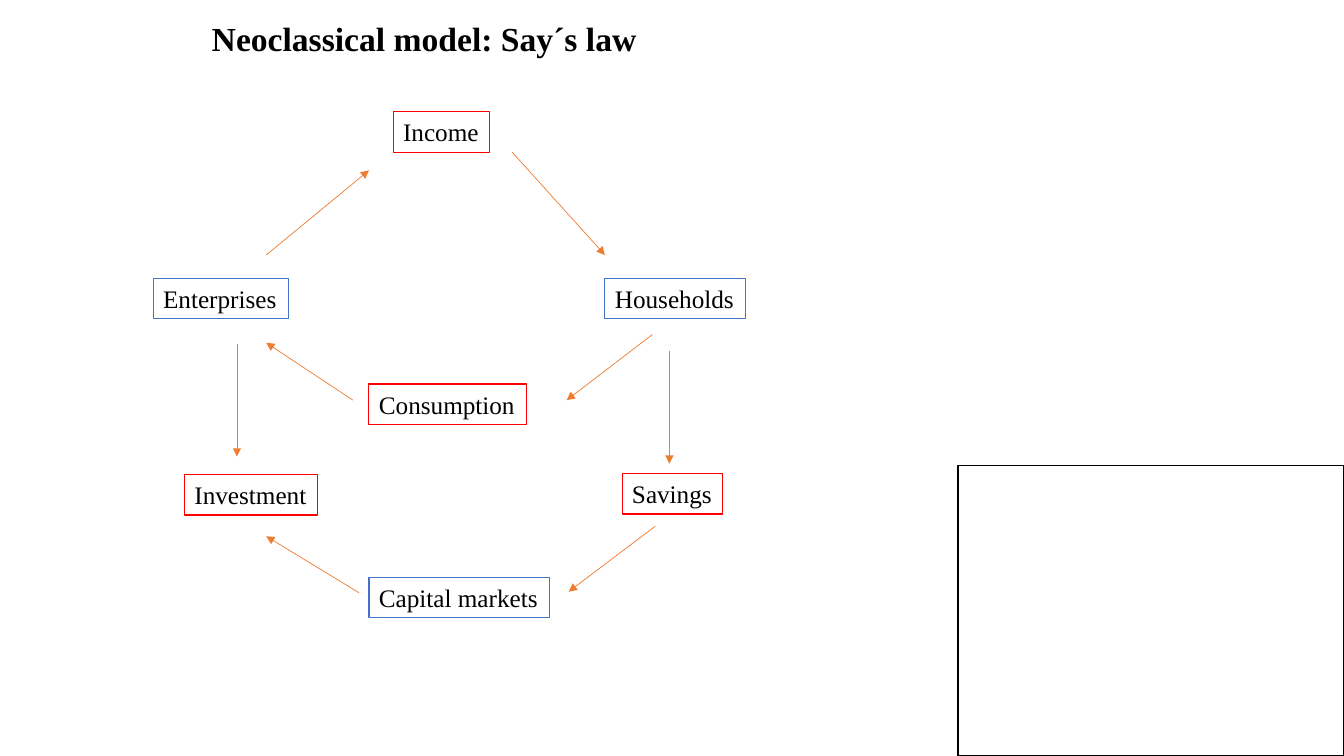
from dataclasses import dataclass

from lxml.etree import SubElement
from pptx import Presentation
from pptx.dml.color import RGBColor
from pptx.enum.shapes import MSO_CONNECTOR, MSO_SHAPE
from pptx.enum.text import MSO_ANCHOR, MSO_AUTO_SIZE, PP_ALIGN
from pptx.oxml.ns import qn
from pptx.util import Inches, Pt


@dataclass(frozen=True)
class Theme:
    font: str = "Times New Roman"
    ink: str = "000000"
    actor: str = "4472C4"
    flow: str = "FF0000"
    arrow: str = "ED7D31"
    head: int = 24
    label: int = 18
    frame: float = 1
    edge: float = 0.75
    thin: float = 0.5


@dataclass(frozen=True)
class Box:
    left: float
    top: float
    width: float
    height: float
    cols: int = 1
    rows: int = 1

    def at(self, col, row):
        return (Inches(self.left + col * self.width / self.cols),
                Inches(self.top + row * self.height / self.rows))

    def size(self, cols, rows):
        return (Inches(cols * self.width / self.cols),
                Inches(rows * self.height / self.rows))


THEME = Theme()
WIDE, HIGH = 13.33, 7.5
TITLE = Box(2, 0.13, 4.43, 0.48)
CYCLE = Box(1.5, 1.1, 6, 5, cols=60, rows=50)
FRAME = Box(9.5, 4.62, WIDE - 9.5, HIGH - 4.62)

ROW = 4
# Label, colour, column, row, columns wide
NODES = [
    ("Enterprises", THEME.actor, 0.2, 16.6, 13.4),
    ("Households", THEME.actor, 45, 16.6, 13.9),
    ("Capital markets", THEME.actor, 21.6, 46.3, 17.9),
    ("Savings", THEME.flow, 46.7, 36, 10),
    ("Investment", THEME.flow, 3.3, 36.1, 13.2),
    ("Consumption", THEME.flow, 21.6, 27.1, 15.6),
    ("Income", THEME.flow, 24, 0.1, 9.6),
]
# Start and end, each as column and row
ARROWS = [
    ((11.4, 14.3), (21.6, 5.9)),
    ((35.8, 4.1), (45, 14.3)),
    ((49.7, 22.2), (41.2, 28.7)),
    ((20, 28.7), (11.4, 23)),
    ((51.4, 23.8), (51.4, 35)),
    ((8.5, 23.1), (8.5, 34.3)),
    ((50, 41.2), (41.4, 47.7)),
    ((20.6, 47.8), (11.4, 42.2)),
]


def stroke(line, color, width):
    line.color.rgb = RGBColor.from_string(color)
    line.width = Pt(width)


def write(shape, text, size, bold=False):
    """Put one unwrapped, left-aligned line in the shape."""
    frame = shape.text_frame
    frame.word_wrap = False
    frame.auto_size = MSO_AUTO_SIZE.SHAPE_TO_FIT_TEXT
    frame.vertical_anchor = MSO_ANCHOR.TOP
    line = frame.paragraphs[0]
    line.alignment = PP_ALIGN.LEFT
    run = line.add_run()
    run.text = text
    run.font.name = THEME.font
    run.font.size = Pt(size)
    run.font.bold = bold
    run.font.color.rgb = RGBColor.from_string(THEME.ink)


def add_title(slide, box):
    title = slide.shapes.title
    title.left, title.top = box.at(0, 0)
    title.width, title.height = box.size(1, 1)
    write(title, "Neoclassical model: Say´s law", THEME.head, bold=True)


def add_frame(slide, box):
    frame = slide.shapes.add_shape(
        MSO_SHAPE.RECTANGLE, *box.at(0, 0), *box.size(1, 1))
    frame.shadow.inherit = False
    frame.fill.background()
    stroke(frame.line, THEME.ink, THEME.frame)


def add_arrow(slide, start, end):
    arrow = slide.shapes.add_connector(MSO_CONNECTOR.STRAIGHT, *start, *end)
    stroke(arrow.line, THEME.arrow, THEME.thin)
    props = arrow._element.spPr
    SubElement(props.find(qn("a:ln")), qn("a:tailEnd"), type="triangle")
    SubElement(props, qn("a:effectLst"))


def add_cycle(slide, box):
    for text, color, col, row, wide in NODES:
        node = slide.shapes.add_textbox(*box.at(col, row), *box.size(wide, ROW))
        stroke(node.line, color, THEME.edge)
        write(node, text, THEME.label)
    for start, end in ARROWS:
        add_arrow(slide, box.at(*start), box.at(*end))


def main():
    deck = Presentation()
    deck.slide_width, deck.slide_height = Inches(WIDE), Inches(HIGH)
    slide = deck.slides.add_slide(deck.slide_layouts.get_by_name("Title Only"))
    add_title(slide, TITLE)
    add_frame(slide, FRAME)
    add_cycle(slide, CYCLE)
    deck.save("out.pptx")


if __name__ == "__main__":
    main()
